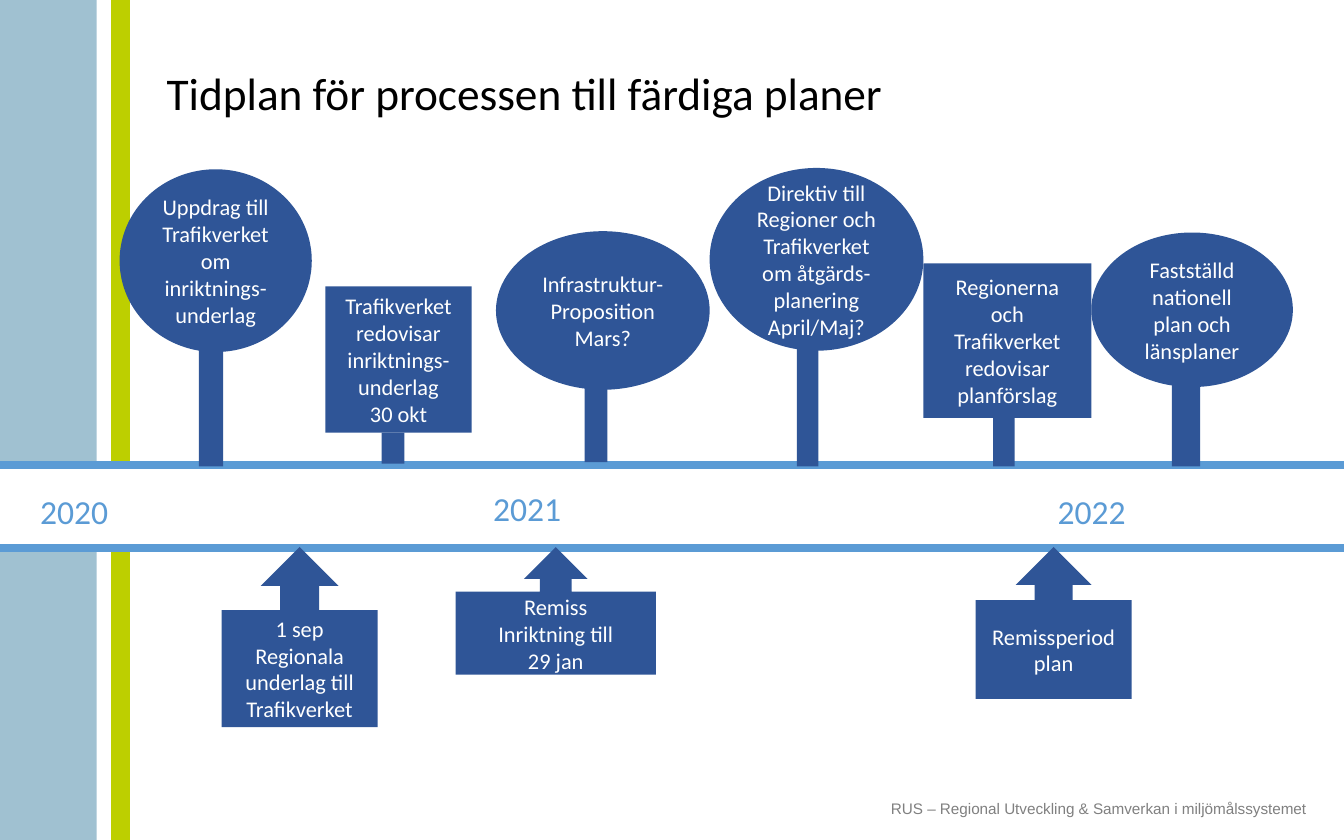
from pptx import Presentation
from pptx.dml.color import RGBColor
from pptx.enum.shapes import MSO_SHAPE
from pptx.enum.text import MSO_ANCHOR, PP_ALIGN
from pptx.util import Inches, Pt

THEME = {
    "font": "Calibri", "footer_font": "Arial",
    "side": "A0C1D1", "accent": "BDCF00", "band": "5B9BD5", "event": "2F5597",
    "white": "FFFFFF", "black": "000000", "grey": "808080",
    "title_size": 24.3, "year_size": 18, "event_size": 12, "footer_size": 8.2,
}

TITLE = "Tidplan för processen till färdiga planer"
FOOTER = "RUS – Regional Utveckling & Samverkan i miljömålssystemet"
YEARS = [("2020", 0.2, 3.6), ("2021", 3.57, 3.58), ("2022", 7.77, 3.6)]

# Paragraphs, shape, its box (left, top, width, height), stem (left, top, width, bottom)
EVENTS_ABOVE = [
    (["Uppdrag till Trafikverket om inriktnings-underlag"],
     MSO_SHAPE.OVAL, (0.89, 1.26, 1.43, 1.36), (1.48, 2.6, 0.18, 3.47)),
    (["Trafikverket redovisar inriktnings-underlag", "30 okt"],
     MSO_SHAPE.RECTANGLE, (2.42, 2.13, 1.09, 1.09), (2.84, 3.22, 0.17, 3.45)),
    (["Infrastruktur-", "Proposition", "Mars?"],
     MSO_SHAPE.OVAL, (3.69, 1.72, 1.59, 1.18), (4.35, 2.78, 0.17, 3.44)),
    (["Direktiv till Regioner och Trafikverket om åtgärds-planering", "April/Maj?"],
     MSO_SHAPE.OVAL, (5.28, 1.25, 1.59, 1.36), (5.93, 2.5, 0.16, 3.47)),
    (["Regionerna och Trafikverket redovisar planförslag"],
     MSO_SHAPE.RECTANGLE, (6.87, 1.96, 1.25, 1.15), (7.39, 3.1, 0.16, 3.47)),
    (["Fastställd nationell plan och länsplaner"],
     MSO_SHAPE.OVAL, (8.12, 1.73, 1.5, 1.15), (8.72, 2.79, 0.21, 3.47)),
]

# Paragraphs, left, width, height
CALLOUT_TOP = 4.07
EVENTS_BELOW = [
    (["1 sep", "Regionala underlag till Trafikverket"], 1.65, 1.16, 1.34),
    (["Remiss", "Inriktning till", "29 jan"], 3.39, 1.49, 0.95),
    (["Remissperiod plan"], 7.26, 1.16, 1.13),
]


def color(name):
    return RGBColor.from_string(THEME[name])


def write(shape, paragraphs, *, size, ink, font="font", align=PP_ALIGN.LEFT,
          anchor=MSO_ANCHOR.TOP, line_spacing=None):
    frame = shape.text_frame
    frame.word_wrap = True
    frame.vertical_anchor = anchor
    frame.text = "\n".join(paragraphs)
    for paragraph in frame.paragraphs:
        paragraph.alignment = align
        paragraph.line_spacing = line_spacing
        for run in paragraph.runs:
            run.font.name = THEME[font]
            run.font.size = Pt(THEME[size])
            run.font.color.rgb = color(ink)


def add_block(slide, kind, box, fill, line=None, line_width=1):
    shape = slide.shapes.add_shape(kind, *map(Inches, box))
    shape.shadow.inherit = False
    shape.fill.solid()
    shape.fill.fore_color.rgb = color(fill)
    if line:
        shape.line.color.rgb = color(line)
        shape.line.width = Pt(line_width)
    else:
        shape.line.fill.background()
    return shape


def add_text(slide, text, box, **style):
    write(slide.shapes.add_textbox(*map(Inches, box)), [text], **style)


def add_event(slide, paragraphs, kind, box):
    shape = add_block(slide, kind, box, "event")
    write(shape, paragraphs, size="event_size", ink="white",
          align=PP_ALIGN.CENTER, anchor=MSO_ANCHOR.MIDDLE)


def place_title(slide):
    title = slide.shapes.title
    title.left, title.top, title.width, title.height = map(Inches, (1.14, 0.61, 8.17, 0.51))
    write(title, [TITLE], size="title_size", ink="black",
          anchor=MSO_ANCHOR.MIDDLE, line_spacing=0.9)
    title.text_frame.margin_bottom = Inches(0.36)  # lifts the line within its box


def main():
    presentation = Presentation()
    presentation.slide_width, presentation.slide_height = Inches(10), Inches(6.25)
    slide = presentation.slides.add_slide(presentation.slide_layouts[5])

    add_text(slide, FOOTER, (2.69, 5.9, 7.13, 0.24), size="footer_size",
             ink="grey", font="footer_font", align=PP_ALIGN.RIGHT)
    add_block(slide, MSO_SHAPE.RECTANGLE, (0, 0, 0.72, 6.25), "side")
    add_block(slide, MSO_SHAPE.RECTANGLE, (0.83, 0, 0.13, 6.25), "accent", "accent")
    place_title(slide)

    add_block(slide, MSO_SHAPE.RECTANGLE, (-0.15, 3.46, 10.26, 0.62), "white", "band", 4.5)
    for year, left, top in YEARS:
        add_text(slide, year, (left, top, 0.72, 0.4), size="year_size", ink="band")

    for paragraphs, kind, box, (left, top, width, bottom) in EVENTS_ABOVE:
        add_event(slide, paragraphs, kind, box)
        add_block(slide, MSO_SHAPE.RECTANGLE, (left, top, width, bottom - top), "event")
    for paragraphs, left, width, height in EVENTS_BELOW:
        add_event(slide, paragraphs, MSO_SHAPE.UP_ARROW_CALLOUT,
                  (left, CALLOUT_TOP, width, height))

    presentation.save("out.pptx")


if __name__ == "__main__":
    main()
